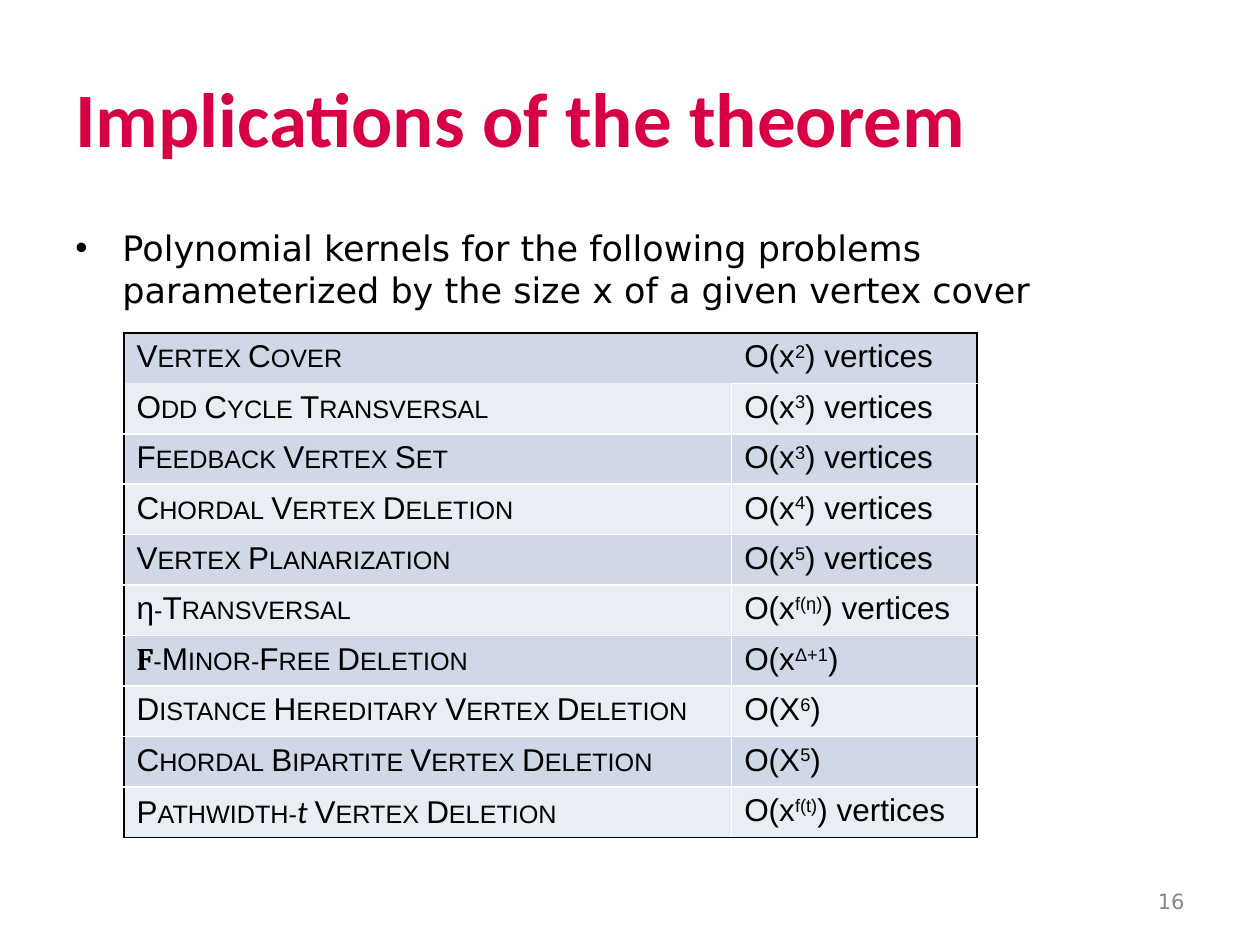
from lxml import etree
from pptx import Presentation
from pptx.dml.color import RGBColor
from pptx.enum.text import MSO_ANCHOR, PP_ALIGN
from pptx.oxml.ns import qn
from pptx.util import Cm, Pt

LEFT, RIGHT = PP_ALIGN.LEFT, PP_ALIGN.RIGHT
TOP, MIDDLE = MSO_ANCHOR.TOP, MSO_ANCHOR.MIDDLE
BLACK, WHITE = "000000", "FFFFFF"
BAND_FILLS = ("D0D8E8", "E9EDF4")
SMALL = {"cap": "small"}
RAISED = {"baseline": "30000"}

PROBLEMS = [
    ([("Vertex Cover", SMALL)], "O(x", "2", ") vertices"),
    ([("Odd Cycle Transversal", SMALL)], "O(x", "3", ") vertices"),
    ([("Feedback Vertex Set", SMALL)], "O(x", "3", ") vertices"),
    ([("Chordal Vertex Deletion", SMALL)], "O(x", "4", ") vertices"),
    ([("Vertex Planarization", SMALL)], "O(x", "5", ") vertices"),
    ([("η", {}), ("-Transversal", SMALL)], "O(x", "f(η)", ") vertices"),
    ([("F", {"b": "1"}, "Cambria"), ("-Minor-Free Deletion", SMALL)], "O(x", "Δ+1", ")"),
    ([("Distance Hereditary Vertex Deletion", SMALL)], "O(X", "6", ")"),
    ([("Chordal Bipartite Vertex Deletion", SMALL)], "O(X", "5", ")"),
    ([("Pathwidth-", SMALL), ("t", {"i": "1"}, "Calibri"), (" Vertex Deletion", SMALL)],
     "O(x", "f(t)", ") vertices"),
]


def color(hex_code):
    """Return the colour for a hex string."""
    return RGBColor.from_string(hex_code)


class SlideBuilder:
    """Holds the text style and the current slide."""

    font = "DejaVu Sans"
    table_font = "Arial"
    table_size = 18

    def __init__(self, slide):
        """Start building on the given slide."""
        self.slide = slide

    def add_run(self, paragraph, text, font, size, hex_code=BLACK, attributes=None):
        """Add one styled run to a paragraph."""
        run = paragraph.add_run()
        run.text = text
        run.font.name, run.font.size = font, Pt(size)
        run.font.color.rgb = color(hex_code)
        properties = run._r.get_or_add_rPr()
        for name, value in (attributes or {}).items():
            properties.set(name, value)

    def add_text(self, box, text, size, hex_code=BLACK, font=font,
                 anchor=TOP, alignment=LEFT, bold=False, bullet=False):
        """Add a one-paragraph text box."""
        shape = self.slide.shapes.add_textbox(*map(Cm, box))
        frame = shape.text_frame
        frame.word_wrap = True
        frame.vertical_anchor = anchor
        paragraph = frame.paragraphs[0]
        paragraph.alignment = alignment
        if bullet:
            properties = paragraph._p.get_or_add_pPr()
            properties.set("marL", str(Cm(0.95)))
            properties.set("indent", str(-Cm(0.95)))
            etree.SubElement(properties, qn("a:buFont")).set("typeface", "Arial")
            etree.SubElement(properties, qn("a:buChar")).set("char", "•")
        self.add_run(paragraph, text, font, size, hex_code, {"b": "1"} if bold else None)

    def set_borders(self, cell, borders):
        """Draw the sides of a cell, leaving out those without a colour."""
        properties = cell._tc.get_or_add_tcPr()
        for side, hex_code in zip("LRTB", borders):
            line = etree.SubElement(properties, qn(f"a:ln{side}"))
            line.set("w", str(Pt(1)))
            if hex_code:
                fill = etree.SubElement(line, qn("a:solidFill"))
                etree.SubElement(fill, qn("a:srgbClr")).set("val", hex_code)
            else:
                etree.SubElement(line, qn("a:noFill"))

    def fill_cell(self, cell, runs, fill, borders):
        """Write the runs of a cell and set its fill and borders."""
        self.set_borders(cell, borders)
        cell.fill.solid()
        cell.fill.fore_color.rgb = color(fill)
        paragraph = cell.text_frame.paragraphs[0]
        for text, attributes, *font in runs:
            self.add_run(paragraph, text, font[0] if font else self.table_font,
                         self.table_size, attributes=attributes)

    def add_kernel_table(self, left, top, widths, row_height, problems):
        """Add the table of problems and their kernel sizes."""
        count = len(problems)
        frame = self.slide.shapes.add_table(
            count, 2, Cm(left), Cm(top), Cm(sum(widths)), Cm(row_height * count))
        table = frame.table
        table.first_row = table.horz_banding = False
        for column, width in zip(table.columns, widths):
            column.width = Cm(width)
        for index, (name, base, exponent, ending) in enumerate(problems):
            table.rows[index].height = Cm(row_height)
            fill = BAND_FILLS[index % 2]
            inner = WHITE if index else None
            above = WHITE if index else BLACK
            name_above = None if index == 1 else above
            below = BLACK if index == count - 1 else WHITE
            name_below = below if index else None
            size = [(base, {}), (exponent, RAISED), (ending, {})]
            self.fill_cell(table.cell(index, 0), name, fill,
                           (BLACK, inner, name_above, name_below))
            self.fill_cell(table.cell(index, 1), size, fill,
                           (inner, BLACK, above, below))


def main():
    """Build the slide and save it."""
    presentation = Presentation()
    presentation.slide_width, presentation.slide_height = Cm(25.4), Cm(19.05)
    builder = SlideBuilder(presentation.slides.add_slide(presentation.slide_layouts[6]))
    builder.add_text((1.27, 0.76, 22.86, 3.18), "Implications of the theorem", 44,
                     "D70044", "Calibri", anchor=MIDDLE, bold=True)
    builder.add_text((1.27, 4.45, 22.86, 12.57),
                     "Polynomial kernels for the following problems "
                     "parameterized by the size x of a given vertex cover",
                     20, bullet=True)
    builder.add_kernel_table(2.5, 6.71, (12.25, 4.95), 0.94, PROBLEMS)
    builder.add_text((18.2, 17.66, 5.93, 1.01), "16", 12, "898989",
                     anchor=MIDDLE, alignment=RIGHT)
    presentation.save("out.pptx")


if __name__ == "__main__":
    main()
